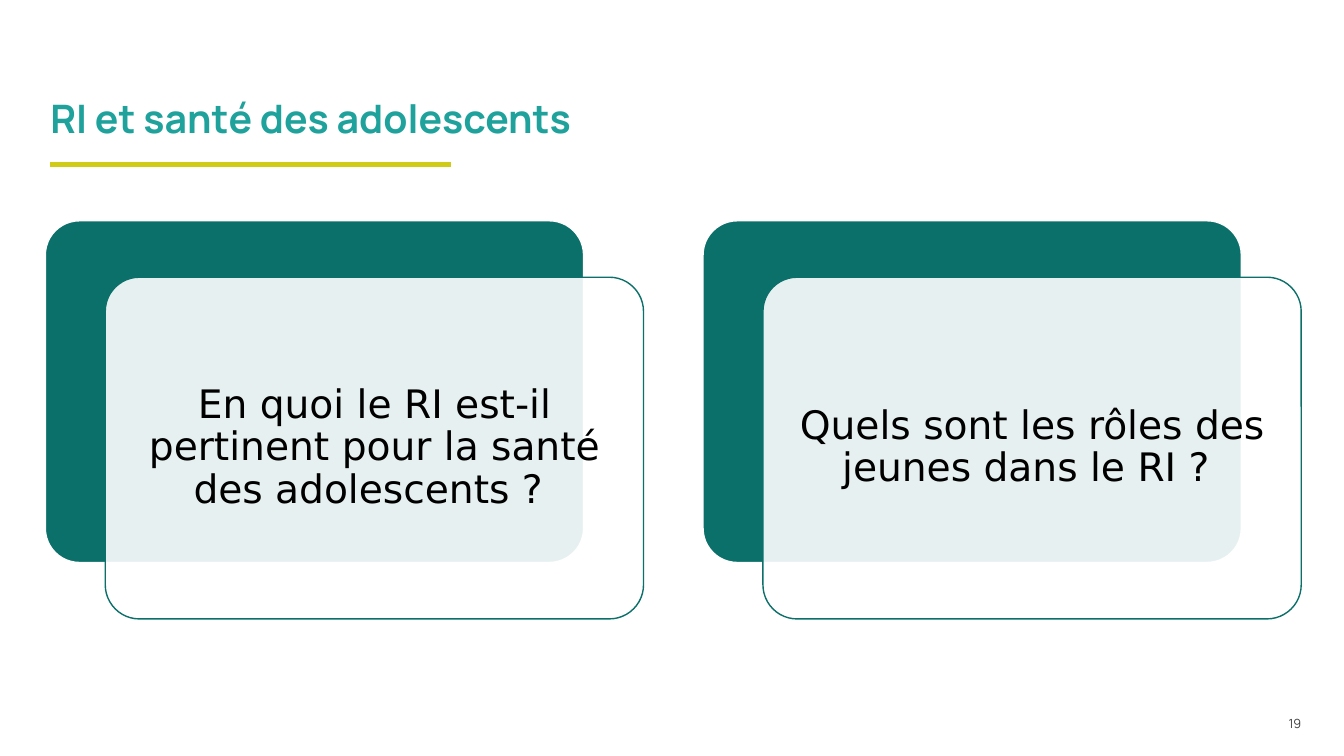
from lxml.etree import SubElement as Sub
from pptx import Presentation
from pptx.dml.color import RGBColor
from pptx.enum.shapes import MSO_CONNECTOR as Conn, MSO_SHAPE as Geo
from pptx.enum.text import MSO_ANCHOR as Anchor, PP_ALIGN as Align
from pptx.oxml.ns import qn
from pptx.util import Pt

WHITE = RGBColor(0xFF, 0xFF, 0xFF)
BLACK = RGBColor(0, 0, 0)
GREY = RGBColor(0x3F, 0x3F, 0x3F)
TEAL = RGBColor(0x1F, 0xA2, 0x9C)
DEEP = RGBColor(0x0B, 0x6F, 0x6A)
LIME = RGBColor(0xD0, 0xCB, 0x17)

HEAD = dict(name="Manrope", size=Pt(28), bold=True)
BODY = dict(name="DejaVu Sans", size=Pt(28))
FOOT = dict(name="Manrope", size=Pt(9))

CARD_W, CARD_H = 384.5, 244.1
LEFT, TOP, STEP = 32.4, 157.7, 469.8
SHIFT_X, SHIFT_Y = 42.8, 40.3
ASKS = [
    "En quoi le RI est-il pertinent pour la santé des adolescents ? ",
    "Quels sont les rôles des jeunes dans le RI ? ",
]


class Page:
    def __init__(self, deck):
        self.shapes = deck.slides.add_slide(deck.slide_layouts[6]).shapes

    def set_text(self, shape, text, font, color, pads,
                 align=Align.LEFT, anchor=Anchor.TOP, lead=1.0):
        frame = shape.text_frame
        sides = ("margin_left", "margin_top", "margin_right", "margin_bottom")
        form = dict(zip(sides, map(Pt, pads)), word_wrap=True, vertical_anchor=anchor)
        for key, val in form.items():
            setattr(frame, key, val)
        para = frame.paragraphs[0]
        para.alignment, para.line_spacing = align, lead
        run = para.add_run()
        run.text = text
        for key, val in font.items():
            setattr(run.font, key, val)
        run.font.color.rgb = color

    def label(self, box, *args, **form):
        self.set_text(self.shapes.add_textbox(*map(Pt, box)), *args, **form)

    def rule(self, x1, y1, x2, y2, color, width):
        line = self.shapes.add_connector(Conn.STRAIGHT, *map(Pt, (x1, y1, x2, y2)))
        line.line.color.rgb = color
        line.line.width = Pt(width)
        Sub(line._element.spPr, qn("a:effectLst"))

    def panel(self, x, y, fill, edge, alpha=None):
        shape = self.shapes.add_shape(
            Geo.ROUNDED_RECTANGLE, *map(Pt, (x, y, CARD_W, CARD_H)))
        shape.adjustments[0] = 0.1
        shape.shadow.inherit = False
        shape.fill.solid()
        shape.fill.fore_color.rgb = fill
        shape.line.color.rgb = edge
        shape.line.width = Pt(1)
        if alpha:
            tint = shape._element.spPr.find(qn("a:solidFill"))[0]
            Sub(tint, qn("a:alpha"), val=str(alpha * 1000))
        return shape

    def card(self, x, y, text):
        self.panel(x, y, DEEP, WHITE)
        front = self.panel(x + SHIFT_X, y + SHIFT_Y, WHITE, DEEP, alpha=90)
        self.set_text(front, text, BODY, BLACK, (8.64,) * 4,
                      align=Align.CENTER, anchor=Anchor.MIDDLE, lead=0.9)


def main():
    deck = Presentation()
    deck.slide_width, deck.slide_height = Pt(960), Pt(540)
    page = Page(deck)
    page.rule(36, 117.4, 321.8, 117.4, LIME, 3.25)
    page.label((713.5, 508.3, 216, 18.7), "19", FOOT, GREY, (0, 2.9, 0, 0),
               align=Align.RIGHT)
    page.label((36, 62.6, 900.7, 64), "RI et santé des adolescents",
               HEAD, TEAL, (0, 7.2, 0, 0), lead=0.95)
    for col, ask in enumerate(ASKS):
        page.card(LEFT + col * STEP, TOP, ask)
    deck.save("out.pptx")


if __name__ == "__main__":
    main()
